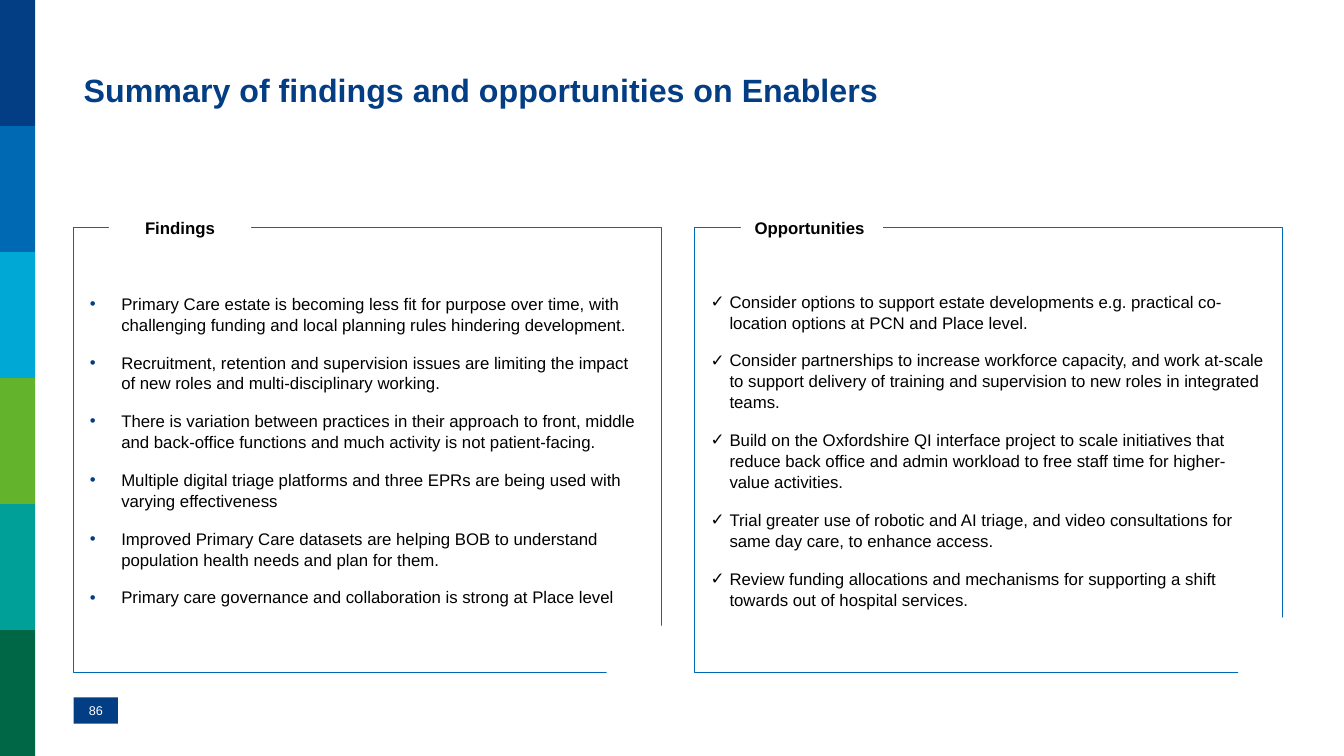
from dataclasses import dataclass

from lxml import etree
from pptx import Presentation
from pptx.dml.color import RGBColor
from pptx.enum.shapes import MSO_SHAPE
from pptx.enum.text import MSO_ANCHOR, MSO_AUTO_SIZE, PP_ALIGN
from pptx.oxml.ns import qn
from pptx.util import Pt

RECT, OVAL = MSO_SHAPE.RECTANGLE, MSO_SHAPE.OVAL
TOP, MIDDLE = MSO_ANCHOR.TOP, MSO_ANCHOR.MIDDLE
LEFT, CENTER = PP_ALIGN.LEFT, PP_ALIGN.CENTER
NO_FIT = MSO_AUTO_SIZE.NONE

TITLE = "Summary of findings and opportunities on Enablers"
PAGE = "86"
# label: x offset of the heading; gap: offset of the open corner; hang: indent
PANELS = [
    {
        "head": "Findings", "label": 25.2, "gap": (379.5, 281.5),
        "mark": "•", "tint": "033E85", "hang": 22.5,
        "items": [
            "Primary Care estate is becoming less fit for purpose over time, with challenging funding and local planning rules hindering development.",
            "Recruitment, retention and supervision issues are limiting the impact of new roles and multi-disciplinary working.",
            "There is variation between practices in their approach to front, middle and back-office functions and much activity is not patient-facing.",
            "Multiple digital triage platforms and three EPRs are being used with varying effectiveness",
            "Improved Primary Care datasets are helping BOB to understand population health needs and plan for them.",
            "Primary care governance and collaboration is strong at Place level",
        ],
    },
    {
        "head": "Opportunities ", "label": 33.1, "gap": (385.2, 278),
        "mark": "✓", "tint": "000000", "hang": 13.5,
        "items": [
            "Consider options to support estate developments e.g. practical co-location options at PCN and Place level.",
            "Consider partnerships to increase workforce capacity, and work at-scale to support delivery of training and supervision to new roles in integrated teams.",
            "Build on the Oxfordshire QI interface project to scale initiatives that reduce back office and admin workload to free staff time for higher-value activities.",
            "Trial greater use of robotic and AI triage, and video consultations for same day care, to enhance access.",
            "Review funding allocations and mechanisms for supporting a shift towards out of hospital services.",
        ],
    },
]


@dataclass(frozen=True)
class Theme:
    font: str = "Arial"
    navy: str = "033E85"
    blue: str = "0069B3"
    white: str = "FFFFFF"
    black: str = "000000"
    bands: tuple = ("033E85", "0069B3", "00A8D6", "64B32D", "009F97", "006746")
    title: float = 23
    body: float = 12
    small: float = 9


LOOK = Theme()
WIDE, HIGH = 960, 540
BAND = 25.2
EDGE = 52.6
PANEL_TOP, PANEL_W, PANEL_H = 162.7, 419.8, 317.5
PITCH = 443.5
LABEL_W, LABEL_H = 101.5, 14.4
GAP_W, GAP_H = 52.6, 51.1


def rgb(code):
    return RGBColor.from_string(code)


def place(shape, x, y, w, h):
    spots = {"left": x, "top": y, "width": w, "height": h}
    for name, value in spots.items():
        setattr(shape, name, Pt(value))


def block(slide, kind, box, fill, line=None):
    shape = slide.shapes.add_shape(kind, *map(Pt, box))
    shape.shadow.inherit = False
    shape.fill.solid()
    shape.fill.fore_color.rgb = rgb(fill)
    if line:
        shape.line.color.rgb = rgb(fill)
        shape.line.width = Pt(line)
    else:
        shape.line.fill.background()
    return shape


def frame(shape, anchor, inset):
    """Set the text area of a shape: anchor, wrap and (side, end) insets."""
    side, end = map(Pt, inset)
    form = {
        "word_wrap": True, "auto_size": NO_FIT, "vertical_anchor": anchor,
        "margin_left": side, "margin_right": side,
        "margin_top": end, "margin_bottom": end,
    }
    for name, value in form.items():
        setattr(shape.text_frame, name, value)
    return shape.text_frame


def write(para, text, size, color, bold=False, align=LEFT):
    para.alignment = align
    run = para.add_run()
    run.text = text
    form = {"name": LOOK.font, "size": Pt(size), "bold": bold}
    for name, value in form.items():
        setattr(run.font, name, value)
    run.font.color.rgb = rgb(color)


def bullet(para, mark, tint, hang):
    props = para._p.get_or_add_pPr()
    props.set("marL", str(Pt(hang)))
    props.set("indent", str(-Pt(hang)))
    color = etree.SubElement(props, qn("a:buClr"))
    etree.SubElement(color, qn("a:srgbClr"), val=tint)
    etree.SubElement(props, qn("a:buFont"), typeface=LOOK.font)
    etree.SubElement(props, qn("a:buChar"), char=mark)


def draw_panel(slide, body, x, panel):
    place(body, x, PANEL_TOP, PANEL_W, PANEL_H)
    body.line.color.rgb = rgb(LOOK.blue)
    body.line.width = Pt(1)
    text = frame(body, MIDDLE, (11.5, 11.5))
    for i, item in enumerate(panel["items"]):
        para = text.add_paragraph() if i else text.paragraphs[0]
        bullet(para, panel["mark"], panel["tint"], panel["hang"])
        form = {
            "line_spacing": 1.04,
            "space_before": Pt(6 if i else 0), "space_after": Pt(6),
        }
        for name, value in form.items():
            setattr(para, name, value)
        write(para, item, LOOK.body, LOOK.black)

    dx, dy = panel["gap"]
    block(slide, OVAL, (x + dx, PANEL_TOP + dy, GAP_W, GAP_H), LOOK.white, 2)
    spot = (x + panel["label"], PANEL_TOP - LABEL_H / 2, LABEL_W, LABEL_H)
    label = block(slide, RECT, spot, LOOK.white)
    para = frame(label, TOP, (0, 0)).paragraphs[0]
    write(para, panel["head"], LOOK.body, LOOK.black, True, CENTER)


def main():
    deck = Presentation()
    deck.slide_width, deck.slide_height = Pt(WIDE), Pt(HIGH)
    slide = deck.slides.add_slide(deck.slide_layouts[3])
    title, *bodies = slide.placeholders

    step = HIGH / len(LOOK.bands)
    for i, color in enumerate(LOOK.bands):
        block(slide, RECT, (0, i * step, BAND, step), color)

    place(title, EDGE, 46.8, 856.8, 49)
    para = frame(title, TOP, (7.2, 3.6)).paragraphs[0]
    write(para, TITLE, LOOK.title, LOOK.navy, True)

    for i, (body, panel) in enumerate(zip(bodies, PANELS)):
        draw_panel(slide, body, EDGE + i * PITCH, panel)

    page = block(slide, RECT, (EDGE, 498.2, 31.7, 18.7), LOOK.navy)
    para = frame(page, MIDDLE, (0, 0)).paragraphs[0]
    write(para, PAGE, LOOK.small, LOOK.white, align=CENTER)
    deck.save("out.pptx")


if __name__ == "__main__":
    main()
